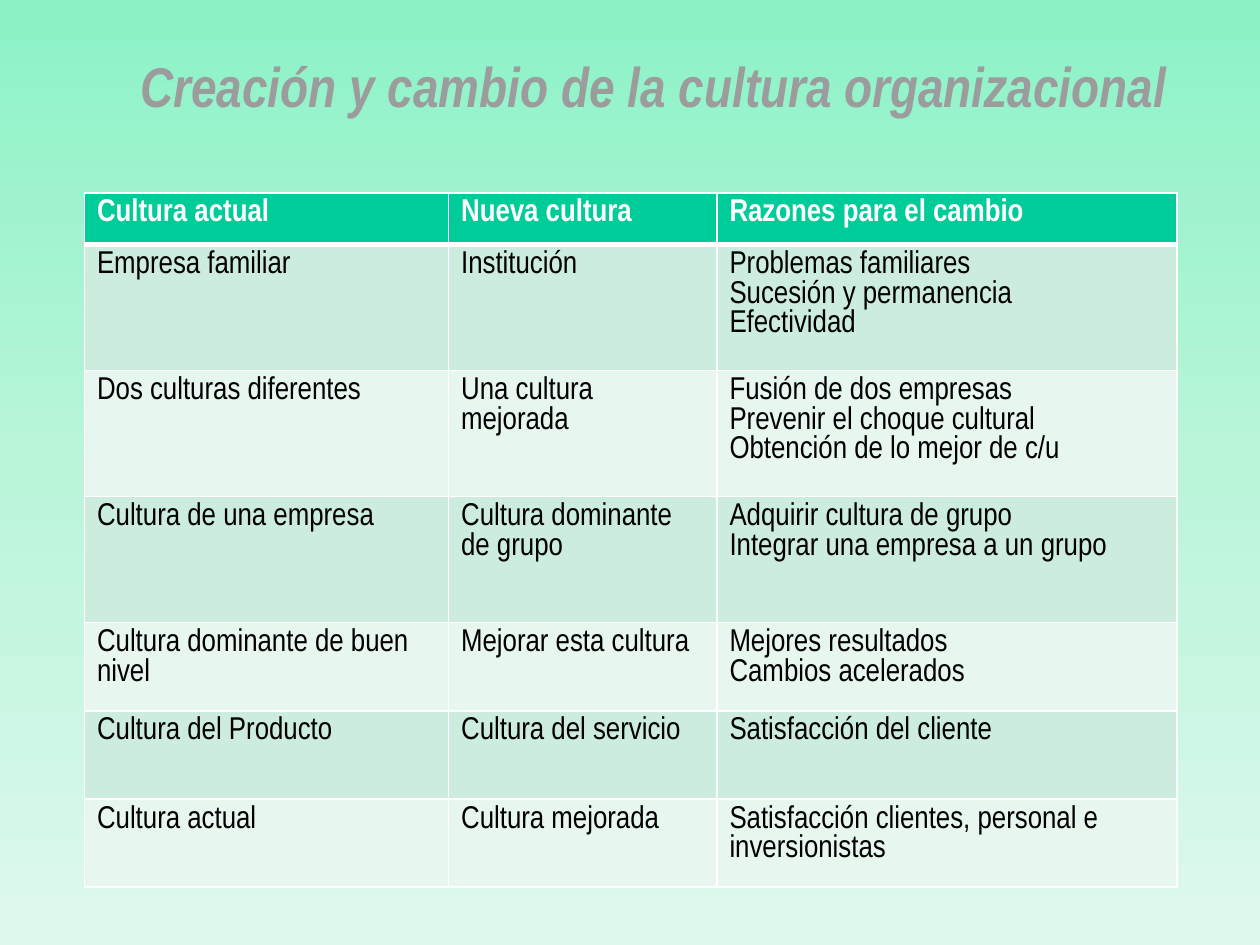
from copy import deepcopy

from lxml import etree
from pptx import Presentation
from pptx.dml.color import RGBColor
from pptx.enum.text import MSO_ANCHOR, MSO_AUTO_SIZE, PP_ALIGN
from pptx.oxml.ns import qn
from pptx.util import Inches, Pt

CENTER = PP_ALIGN.CENTER
TOP = MSO_ANCHOR.TOP
GROW = MSO_AUTO_SIZE.SHAPE_TO_FIT_TEXT

FONT = "Arial Narrow"
BLACK = RGBColor(0x00, 0x00, 0x00)
WHITE = RGBColor(0xFF, 0xFF, 0xFF)
GRAY = RGBColor(0x9C, 0x9C, 0x9C)
GREEN = RGBColor(0x00, 0xCC, 0x99)
BANDS = [RGBColor(0xE7, 0xF6, 0xEF), RGBColor(0xCC, 0xEC, 0xDE)]
BACKGROUND = [
    (0, RGBColor(0x8C, 0xF2, 0xC6)),
    (0.5, RGBColor(0xBA, 0xF5, 0xDA)),
    (1, RGBColor(0xDE, 0xF9, 0xEC)),
]

TITLE = "Creación y cambio de la cultura organizacional"
COL_WIDTHS = [2.89, 2.13, 3.65]
ROW_HEIGHTS = [0.41, 1, 1, 1, 0.7, 0.7, 0.7]
ROWS = [
    ["Cultura actual", "Nueva cultura", "Razones para el cambio"],
    ["Empresa familiar", "Institución",
     "Problemas familiares\nSucesión y permanencia\nEfectividad"],
    ["Dos culturas diferentes", "Una cultura mejorada",
     "Fusión de dos empresas\nPrevenir el choque cultural\nObtención de lo mejor de c/u"],
    ["Cultura de una empresa", "Cultura dominante de grupo",
     "Adquirir cultura de grupo\nIntegrar una empresa a un grupo"],
    ["Cultura dominante de buen nivel", "Mejorar esta cultura",
     "Mejores resultados\nCambios acelerados"],
    ["Cultura del Producto", "Cultura del servicio", "Satisfacción del cliente"],
    ["Cultura actual", "Cultura mejorada",
     "Satisfacción clientes, personal e inversionistas"],
]


def set_background(slide):
    """Fill the background with a vertical three-stop gradient."""
    fill = slide.background.fill
    fill.gradient()
    fill.gradient_angle = 270
    stop_list = slide.element.xpath(".//p:bg//a:gsLst")[0]
    stop_list.append(deepcopy(stop_list[-1]))
    for stop, (position, color) in zip(fill.gradient_stops, BACKGROUND):
        stop.position = position
        stop.color.rgb = color


def add_run(p, text, size, color, bold, italic=False):
    """Add a formatted run to a paragraph."""
    r = p.add_run()
    r.text = text
    r.font.name = FONT
    r.font.size = Pt(size)
    r.font.bold = bold
    r.font.italic = italic
    r.font.color.rgb = color
    return r


def make_line(tag, color, width):
    """Return a solid line element in points of width."""
    line = etree.Element(qn(tag), w=str(Pt(width)))
    solid = etree.SubElement(line, qn("a:solidFill"))
    etree.SubElement(solid, qn("a:srgbClr"), val=str(color))
    return line


def set_title(slide):
    """Place and format the outlined title."""
    title = slide.shapes.title
    title.left, title.top = Inches(0.98), Inches(0.36)
    title.width, title.height = Inches(8.42), Inches(0.64)
    tf = title.text_frame
    tf.word_wrap = False
    tf.auto_size = GROW
    tf.vertical_anchor = TOP
    p = tf.paragraphs[0]
    p.alignment = CENTER
    r = add_run(p, TITLE, 32, GRAY, True, True)
    r.font._element.insert(0, make_line("a:ln", BLACK, 1))


def fill_cell(cell, text, row):
    """Write one table cell with its borders, fill and paragraphs."""
    header = row == 0
    widths = {"L": 1, "R": 1, "T": 3 if row == 1 else 1, "B": 3 if header else 1}
    tc_pr = cell._tc.get_or_add_tcPr()
    for side, width in widths.items():
        tc_pr.append(make_line(f"a:ln{side}", WHITE, width))
    cell.fill.solid()
    cell.fill.fore_color.rgb = GREEN if header else BANDS[row % 2]
    tf = cell.text_frame
    for i, line in enumerate(text.split("\n")):
        p = tf.add_paragraph() if i else tf.paragraphs[0]
        add_run(p, line, 18, WHITE if header else BLACK, header)


def add_culture_table(slide):
    """Add the table comparing current and new cultures."""
    table = slide.shapes.add_table(
        len(ROWS), len(COL_WIDTHS), Inches(0.67), Inches(1.53),
        Inches(sum(COL_WIDTHS)), Inches(sum(ROW_HEIGHTS))).table
    for column, width in zip(table.columns, COL_WIDTHS):
        column.width = Inches(width)
    for row, height in zip(table.rows, ROW_HEIGHTS):
        row.height = Inches(height)
    for i, texts in enumerate(ROWS):
        for j, text in enumerate(texts):
            fill_cell(table.cell(i, j), text, i)


def main():
    """Build and save the slide."""
    prs = Presentation()
    prs.slide_width, prs.slide_height = Inches(10), Inches(7.5)
    slide = prs.slides.add_slide(prs.slide_layouts[5])
    set_background(slide)
    set_title(slide)
    add_culture_table(slide)
    prs.save("out.pptx")


if __name__ == "__main__":
    main()
